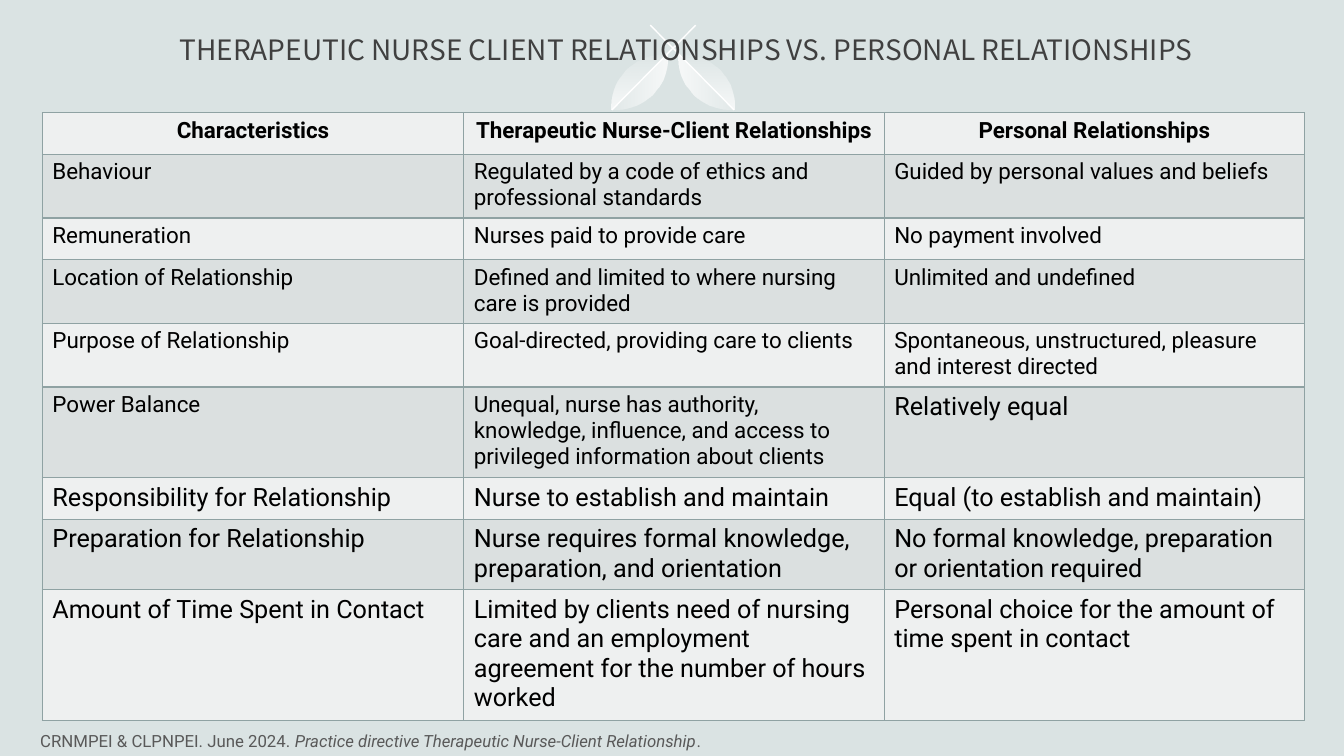
from dataclasses import dataclass

from lxml import etree
from pptx import Presentation
from pptx.dml.color import RGBColor
from pptx.enum import shapes, text
from pptx.oxml import ns
from pptx.util import Inches, Pt


@dataclass(frozen=True)
class Theme:
    background: str = "DAE3E3"
    title: str = "404040"
    body: str = "000000"
    source: str = "595959"
    border: str = "8FA2A3"
    light_row: str = "EEF0F0"
    dark_row: str = "DBE0E0"
    leaf: str = "FFFFFF"
    title_font: str = "Noto Sans CJK KR"
    body_font: str = "Roboto"
    title_size: int = 20
    large_size: int = 18
    table_size: int = 16
    source_size: int = 12


THEME = Theme()
LEAF_TIP = (6.62, 0.54)
LEAF_CURVES = [
    [(6.47, 0.53), (6.33, 0.58), (6.22, 0.69)],
    [(6.11, 0.8), (6.06, 0.95), (6.07, 1.09)],
]
LEAF_DIAGONAL = 7.16
LEAF_CENTRE = 6.675
TABLE_LEFT, TABLE_TOP = 0.42, 1.12
COLUMN_WIDTHS = [4.18, 4.17, 4.17]
ROW_HEIGHT = 0.41
FIRST_LARGE_CELL = (5, 2)
ROWS = [
    ["Characteristics", "Therapeutic Nurse-Client Relationships", "Personal Relationships"],
    ["Behaviour", "Regulated by a code of ethics and professional standards",
     "Guided by personal values and beliefs"],
    ["Remuneration", "Nurses paid to provide care", "No payment involved"],
    ["Location of Relationship", "Defined and limited to where nursing care is provided",
     "Unlimited and undefined"],
    ["Purpose of Relationship", "Goal-directed, providing care to clients",
     "Spontaneous, unstructured, pleasure and interest directed"],
    ["Power Balance",
     "Unequal, nurse has authority, knowledge, influence, and access to privileged "
     "information about clients", "Relatively equal"],
    ["Responsibility for Relationship", "Nurse to establish and maintain",
     "Equal (to establish and maintain)"],
    ["Preparation for Relationship",
     "Nurse requires formal knowledge, preparation, and orientation",
     "No formal knowledge, preparation or orientation required"],
    ["Amount of Time Spent in Contact",
     "Limited by clients need of nursing care and an employment agreement for the "
     "number of hours worked", "Personal choice for the amount of time spent in contact"],
]


def rgb(value):
    return RGBColor.from_string(value)


def style_font(font, name, size, color):
    font.name = name
    font.size = Pt(size)
    font.color.rgb = rgb(color)


def add_text_box(slide, left, top, width, height):
    frame = slide.shapes.add_textbox(*map(Inches, (left, top, width, height))).text_frame
    frame.word_wrap = True
    return frame


def mirror(point):
    return 2 * LEAF_CENTRE - point[0], point[1]


def across_diagonal(point):
    return LEAF_DIAGONAL - point[1], LEAF_DIAGONAL - point[0]


def leaf_outline(steps=10):
    """Points along the upper edge of the left leaf, from tip to stem."""
    points = [LEAF_TIP]
    for first, second, end in LEAF_CURVES:
        start = points[-1]
        for step in range(1, steps + 1):
            t = step / steps
            weights = ((1 - t) ** 3, 3 * t * (1 - t) ** 2, 3 * t ** 2 * (1 - t), t ** 3)
            curve = (start, first, second, end)
            points.append(tuple(sum(w * p[axis] for w, p in zip(weights, curve))
                                for axis in (0, 1)))
    return points


def add_leaf_half(slide, points, angle, end_opacity):
    corners = [(Inches(x), Inches(y)) for x, y in points]
    builder = slide.shapes.build_freeform(*corners[0], scale=1.0)
    builder.add_line_segments(corners[1:], close=True)
    shape = builder.convert_to_shape()
    shape.shadow.inherit = False
    shape.line.fill.background()
    shape.fill.gradient()
    shape.fill.gradient_angle = angle
    for stop, opacity in zip(shape.fill.gradient_stops, (80, end_opacity)):
        stop.color.rgb = rgb(THEME.leaf)
    colors = shape.fill._xPr.iter(ns.qn("a:srgbClr"))
    for color, opacity in zip(colors, (80, end_opacity)):
        etree.SubElement(color, ns.qn("a:alpha"), val=str(opacity * 1000))


def add_stem(slide, start, end):
    stem = slide.shapes.add_connector(
        shapes.MSO_CONNECTOR.STRAIGHT, *map(Inches, (*start, *end)))
    stem.line.color.rgb = rgb(THEME.leaf)
    stem.line.width = Pt(1)
    etree.SubElement(stem._element.spPr, ns.qn("a:effectLst"))


def add_leaves(slide):
    upper = leaf_outline()
    lower = [across_diagonal(point) for point in upper]
    for place, lower_angle in ((tuple, 180), (mirror, 0)):
        add_leaf_half(slide, [place(p) for p in lower], lower_angle, 20)
        add_leaf_half(slide, [place(p) for p in upper], 90, 10)
        add_stem(slide, place((6.9, 0.25)), place((6.07, 1.09)))


def add_title(slide):
    frame = add_text_box(slide, 0.42, 0.15, 12.77, 0.68)
    frame.vertical_anchor = text.MSO_ANCHOR.MIDDLE
    frame.text = "THERAPEUTIC NURSE CLIENT RELATIONSHIPS VS. PERSONAL RELATIONSHIPS"
    paragraph = frame.paragraphs[0]
    paragraph.alignment = text.PP_ALIGN.CENTER
    style_font(paragraph.runs[0].font, THEME.title_font, THEME.title_size, THEME.title)


def add_cell_borders(cell):
    properties = cell._tc.get_or_add_tcPr()
    for side in ("lnL", "lnR", "lnT", "lnB"):
        line = etree.SubElement(properties, ns.qn(f"a:{side}"), w=str(Pt(1)))
        fill = etree.SubElement(line, ns.qn("a:solidFill"))
        etree.SubElement(fill, ns.qn("a:srgbClr"), val=THEME.border)


def fill_cell(cell, content, row, column):
    add_cell_borders(cell)
    cell.fill.solid()
    cell.fill.fore_color.rgb = rgb(THEME.dark_row if row % 2 else THEME.light_row)
    cell.text_frame.text = content
    paragraph = cell.text_frame.paragraphs[0]
    is_header = row == 0
    if is_header:
        paragraph.alignment = text.PP_ALIGN.CENTER
    size = THEME.large_size if (row, column) >= FIRST_LARGE_CELL else THEME.table_size
    font = paragraph.runs[0].font
    style_font(font, THEME.body_font, size, THEME.body)
    font.bold = is_header


def add_comparison_table(slide):
    table = slide.shapes.add_table(
        len(ROWS), len(COLUMN_WIDTHS), Inches(TABLE_LEFT), Inches(TABLE_TOP),
        Inches(sum(COLUMN_WIDTHS)), Inches(ROW_HEIGHT * len(ROWS))).table
    for column, width in zip(table.columns, COLUMN_WIDTHS):
        column.width = Inches(width)
    for row_index, contents in enumerate(ROWS):
        table.rows[row_index].height = Inches(ROW_HEIGHT)
        for column_index, content in enumerate(contents):
            fill_cell(table.cell(row_index, column_index), content, row_index, column_index)


def add_source(slide):
    paragraph = add_text_box(slide, 0.3, 7.2, 6.99, 0.3).paragraphs[0]
    for content, italic in (
            ("CRNMPEI & CLPNPEI. June 2024. ", False),
            ("Practice directive Therapeutic Nurse-Client Relationship", True),
            (".", False)):
        run = paragraph.add_run()
        run.text = content
        style_font(run.font, THEME.body_font, THEME.source_size, THEME.source)
        run.font.italic = italic


def main():
    presentation = Presentation()
    presentation.slide_width = Inches(13.33)
    presentation.slide_height = Inches(7.5)
    slide = presentation.slides.add_slide(presentation.slide_layouts[6])
    slide.background.fill.solid()
    slide.background.fill.fore_color.rgb = rgb(THEME.background)
    add_leaves(slide)
    add_title(slide)
    add_comparison_table(slide)
    add_source(slide)
    presentation.save("out.pptx")


if __name__ == "__main__":
    main()
